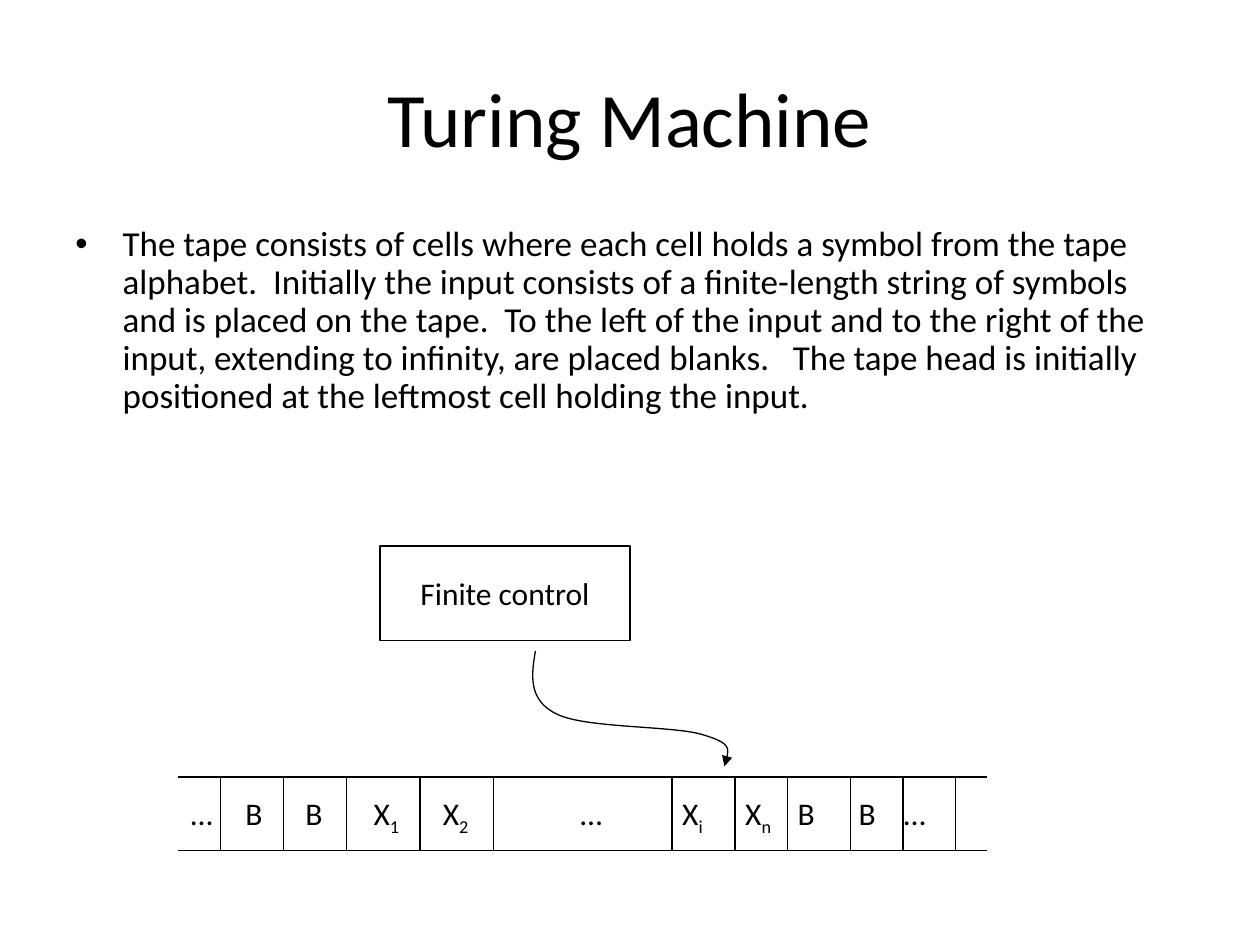
from dataclasses import dataclass

from lxml import etree
from pptx import Presentation
from pptx.dml.color import RGBColor
from pptx.enum.shapes import MSO_CONNECTOR, MSO_SHAPE
from pptx.enum.text import MSO_ANCHOR, PP_ALIGN
from pptx.oxml.ns import qn
from pptx.util import Pt

PX = 7620
LEFT, CENTER = PP_ALIGN.LEFT, PP_ALIGN.CENTER
TOP, MIDDLE = MSO_ANCHOR.TOP, MSO_ANCHOR.MIDDLE
RECTANGLE = MSO_SHAPE.RECTANGLE
STRAIGHT = MSO_CONNECTOR.STRAIGHT


@dataclass(frozen=True)
class Theme:
    font: str = "Calibri"
    ink: RGBColor = RGBColor(0, 0, 0)
    title: int = 44
    body: int = 20
    label: int = 18
    line: float = 0.75


THEME = Theme()
BODY = (
    "The tape consists of cells where each cell holds a symbol from the tape alphabet.  "
    "Initially the input consists of a finite-length string of symbols and is placed on the tape.  "
    "To the left of the input and to the right of the input, extending to infinity, are placed blanks.   "
    "The tape head is initially positioned at the leftmost cell holding the input."
)
DIVIDERS = (40, 100, 160, 230, 300, 470, 530, 580, 640, 690, 740)
SYMBOLS = (
    (0, "…", ""), (52, "B", ""), (109, "B", ""), (174, "X", "1"),
    (240, "X", "2"), (371, "…", ""), (468, "X", "i"), (528, "X", "n"),
    (578, "B", ""), (636, "B", ""), (679, "…", ""),
)
HEAD_CURVE = (
    (7, 0), (3, 23), (0, 47), (27, 60), (54, 74), (140, 71),
    (167, 80), (194, 88), (191, 99), (187, 110),
)


def px(*lengths):
    return [length * PX for length in lengths]


def style_run(r, size):
    r.font.name = THEME.font
    r.font.size = Pt(size)
    r.font.color.rgb = THEME.ink


def style_line(s):
    s.line.color.rgb = THEME.ink
    s.line.width = Pt(THEME.line)


def set_text(s, text, size, align=LEFT, anchor=TOP):
    tf = s.text_frame
    tf.word_wrap = True
    tf.vertical_anchor = anchor
    tf.text = text
    p = tf.paragraphs[0]
    p.alignment = align
    for r in p.runs:
        style_run(r, size)
    return p


def add_title(slide, x, y, w, h):
    s = slide.shapes.add_textbox(*px(x, y, w, h))
    set_text(s, "Turing Machine", THEME.title, CENTER, MIDDLE)


def add_body(slide, x, y, w, h):
    s = slide.shapes.add_textbox(*px(x, y, w, h))
    p = set_text(s, BODY, THEME.body)
    p.line_spacing = 0.9
    p.space_before = Pt(4)
    pPr = p._p.get_or_add_pPr()
    pPr.set("marL", str(45 * PX))
    pPr.set("indent", str(-45 * PX))
    etree.SubElement(pPr, qn("a:buFont")).set("typeface", "Arial")
    etree.SubElement(pPr, qn("a:buChar")).set("char", "•")


def add_control(slide, x, y, w, h):
    s = slide.shapes.add_shape(RECTANGLE, *px(x, y, w, h))
    s.shadow.inherit = False
    s.fill.background()
    style_line(s)
    set_text(s, "Finite control", THEME.label, CENTER, MIDDLE)


def add_line(slide, x1, y1, x2, y2):
    s = slide.shapes.add_connector(STRAIGHT, *px(x1, y1, x2, y2))
    style_line(s)
    etree.SubElement(s._element.spPr, qn("a:effectLst"))


def add_symbols(slide, x, y, w, h):
    s = slide.shapes.add_textbox(*px(x, y, w, h))
    s.text_frame.word_wrap = True
    p = s.text_frame.paragraphs[0]
    tabs = etree.SubElement(p._p.get_or_add_pPr(), qn("a:tabLst"))
    for offset, symbol, index in SYMBOLS:
        if offset:
            etree.SubElement(tabs, qn("a:tab"), pos=str(offset * PX), algn="l")
        r = p.add_run()
        r.text = "\t" + symbol if offset else symbol
        style_run(r, THEME.label)
        if index:
            r = p.add_run()
            r.text = index
            style_run(r, THEME.label)
            r.font._element.set("baseline", "-25000")


def add_tape(slide, x, y, w, h):
    for edge in (y, y + h):
        add_line(slide, x, edge, x + w, edge)
    for offset in DIVIDERS:
        add_line(slide, x + offset, y + h, x + offset, y)
    add_symbols(slide, x, y + 10, 744, 48)


def add_head_arrow(slide, x, y):
    start, *points = HEAD_CURVE
    builder = slide.shapes.build_freeform(*start, scale=PX)
    builder.add_line_segments(points, close=False)
    s = builder.convert_to_shape(*px(x, y))
    segments = list(s._element.iter(qn("a:lnTo")))
    for i in range(0, len(segments), 3):
        curve = etree.Element(qn("a:cubicBezTo"))
        segments[i].addprevious(curve)
        for segment in segments[i:i + 3]:
            curve.append(segment[0])
            segment.getparent().remove(segment)
    s.shadow.inherit = False
    s.fill.background()
    style_line(s)
    etree.SubElement(s.line._get_or_add_ln(), qn("a:tailEnd"), type="triangle")


def main():
    prs = Presentation()
    prs.slide_width, prs.slide_height = px(1200, 900)
    slide = prs.slides.add_slide(prs.slide_layouts[6])
    add_title(slide, 60, 36, 1080, 150)
    add_body(slide, 60, 210, 1080, 594)
    add_control(slide, 362, 520, 238, 90)
    add_tape(slide, 170, 740, 770, 70)
    add_head_arrow(slide, 503, 620)
    prs.save("out.pptx")


if __name__ == "__main__":
    main()
